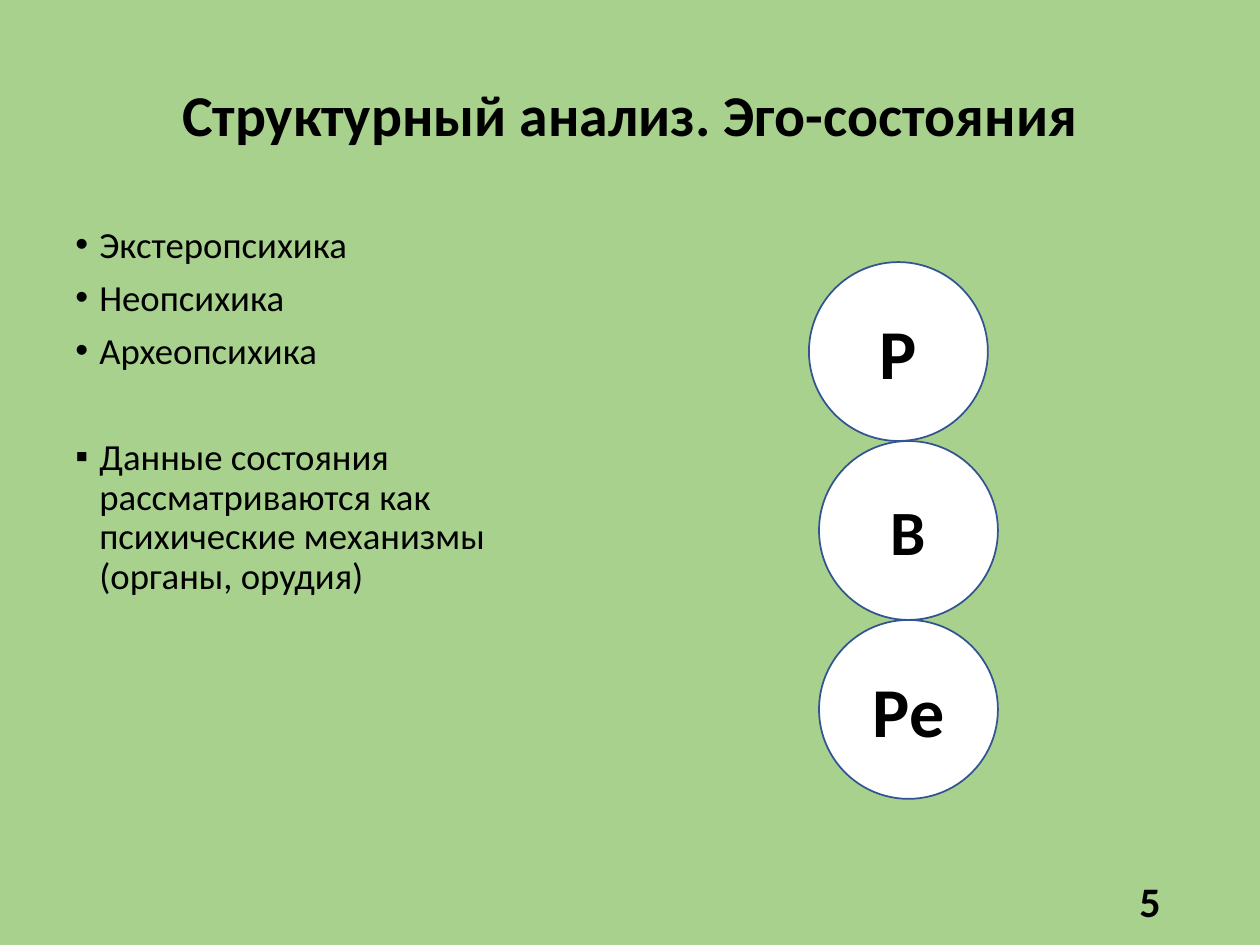
from dataclasses import dataclass

from lxml import etree
from pptx import Presentation
from pptx.dml.color import RGBColor
from pptx.enum.shapes import MSO_SHAPE
from pptx.enum.text import MSO_ANCHOR, PP_ALIGN
from pptx.oxml.ns import qn
from pptx.util import Inches, Pt

OVAL = MSO_SHAPE.OVAL
TOP, MIDDLE = MSO_ANCHOR.TOP, MSO_ANCHOR.MIDDLE
LEFT, CENTER, RIGHT = PP_ALIGN.LEFT, PP_ALIGN.CENTER, PP_ALIGN.RIGHT


@dataclass(frozen=True)
class Theme:
    font: str = "Calibri"
    background: RGBColor = RGBColor(0xA9, 0xD1, 0x8E)
    text: RGBColor = RGBColor(0, 0, 0)
    circle: RGBColor = RGBColor(0xFF, 0xFF, 0xFF)
    outline: RGBColor = RGBColor(0x32, 0x54, 0x91)
    title_size: int = 33
    body_size: int = 21
    number_size: int = 24


theme = Theme()


def style_paragraph(paragraph, size, align, bold=True):
    paragraph.alignment = align
    for run in paragraph.runs:
        run.font.name = theme.font
        run.font.size = Pt(size)
        run.font.bold = bold
        run.font.color.rgb = theme.text


def add_text(left, top, width, height, anchor):
    frame = slide.shapes.add_textbox(
        Inches(left), Inches(top), Inches(width), Inches(height)).text_frame
    frame.word_wrap = True
    frame.vertical_anchor = anchor
    return frame


deck = Presentation()
deck.slide_width, deck.slide_height = Inches(10), Inches(7.5)
slide = deck.slides.add_slide(deck.slide_layouts[6])
slide.background.fill.solid()
slide.background.fill.fore_color.rgb = theme.background

title = add_text(0.69, 0.4, 8.62, 1.07, MIDDLE)
title.text = "Структурный анализ. Эго-состояния"
title.paragraphs[0].line_spacing = 0.9
style_paragraph(title.paragraphs[0], theme.title_size, CENTER)

points = [
    ("•", 0, "Экстеропсихика"),
    ("•", 7.5, "Неопсихика"),
    ("•", 7.5, "Археопсихика"),
    ("▪", 38, "Данные состояния рассматриваются как психические механизмы (органы, орудия)"),
]
body = add_text(0.5, 1.75, 4.42, 4.98, TOP)
body.text = "\n".join(wording for _, _, wording in points)
for paragraph, (bullet, space_before, _) in zip(body.paragraphs, points):
    properties = paragraph._p.get_or_add_pPr()
    properties.set("marL", str(Inches(0.19)))
    properties.set("indent", str(-Inches(0.19)))
    etree.SubElement(properties, qn("a:buFont"), typeface="Arial")
    etree.SubElement(properties, qn("a:buChar"), char=bullet)
    paragraph.line_spacing = 0.9
    paragraph.space_before = Pt(space_before)
    style_paragraph(paragraph, theme.body_size, LEFT, bold=False)

slide_number = add_text(7.06, 6.95, 2.25, 0.4, MIDDLE)
slide_number.text = "5"
style_paragraph(slide_number.paragraphs[0], theme.number_size, RIGHT)

diameter = 1.42
ego_states = [("Р", 6.42, 40), ("В", 6.5, 36), ("Ре", 6.5, 40)]
for row, (letter, left, size) in enumerate(ego_states):
    ego_state = slide.shapes.add_shape(
        OVAL, Inches(left), Inches(2.08 + row * diameter),
        Inches(diameter), Inches(diameter))
    ego_state.shadow.inherit = False
    ego_state.fill.solid()
    ego_state.fill.fore_color.rgb = theme.circle
    ego_state.line.color.rgb = theme.outline
    ego_state.line.width = Pt(1)
    ego_state.text_frame.text = letter
    ego_state.text_frame.vertical_anchor = MIDDLE
    style_paragraph(ego_state.text_frame.paragraphs[0], size, CENTER)

deck.save("out.pptx")
